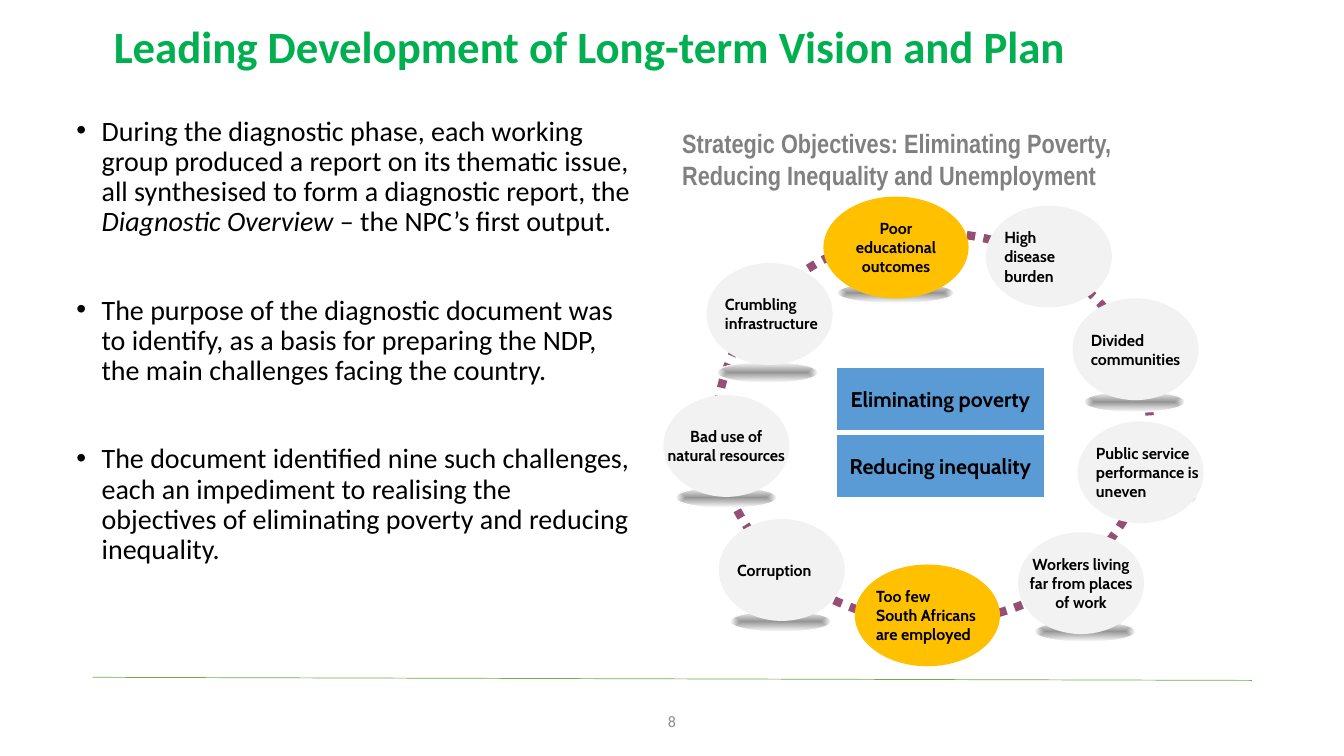
import pptx
import pptx.util
import pptx.dml.color
import pptx.enum.dml
import pptx.enum.shapes
import pptx.enum.text
import pptx.oxml.ns
import lxml.etree

Pt = pptx.util.Pt
SHAPE = pptx.enum.shapes.MSO_SHAPE
ALIGN = pptx.enum.text.PP_ALIGN
ANCHOR = pptx.enum.text.MSO_ANCHOR
qn = pptx.oxml.ns.qn

COLOURS = {
    "title": "00B050", "text": "000000", "heading": "808080", "number": "8C8C8C",
    "rule": "70AD47", "ring": "954F72", "goal": "5B9BD5", "white": "FFFFFF",
    "gold": "FFC000", "grey": "F2F2F2", "shade": "969696",
}

# Content
TITLE = "Leading Development of Long-term Vision and Plan"
HEADING = "Strategic Objectives: Eliminating Poverty, Reducing Inequality and Unemployment"
PAGE = "8"
# Each bullet is a list of (text, italic)
BULLETS = [
    [("During the diagnostic phase, each working group produced a report on its thematic "
      "issue, all synthesised to form a diagnostic report, the ", False),
     ("Diagnostic Overview", True),
     (" – the NPC’s first output.", False)],
    [("The purpose of the diagnostic document was to identify, as a basis for preparing "
      "the NDP, the main challenges facing the country.", False)],
    [("The document identified nine such challenges, each an impediment to realising the "
      "objectives of eliminating poverty and reducing inequality.", False)],
]
GOALS = ["Eliminating poverty", "Reducing inequality"]
# Text, fill, centred, left and top of the oval, left and top of its shadow
CHALLENGES = [
    ("Too few\nSouth Africans\nare employed", "gold", False, (610.6, 403.2), None),
    ("Poor\neducational\noutcomes", "gold", True, (588.2, 140.4), (597.6, 201.6)),
    ("Crumbling\ninfrastructure", "grey", False, (504.7, 187.9), (511.9, 258.5)),
    ("Bad use of\nnatural resources", "grey", True, (473.8, 282.2), (482.4, 347.8)),
    ("Corruption", "grey", False, (513.4, 370.8), (521.3, 436.3)),
    ("Workers living\nfar from places\nof work", "grey", True, (727.2, 380.2), (738.7, 443.5)),
    ("Public service\nperformance is\nuneven", "grey", False, (769.7, 301), (782.6, 347.8)),
    ("Divided\ncommunities", "grey", False, (766.1, 213.1), (774, 279.4)),
    ("High\ndisease\nburden", "grey", False, (704.2, 146.9), None),
]
OVAL_WIDTH = {"gold": 103.7, "grey": 90}
SHADOW_WIDTH = {"gold": 84.2, "grey": 72.7}
OVAL_HEIGHT, SHADOW_HEIGHT = 72.7, 15.1

deck = pptx.Presentation()
deck.slide_width, deck.slide_height = Pt(960), Pt(540)
slide = deck.slides.add_slide(deck.slide_layouts[6])


def rgb(name):
    return pptx.dml.color.RGBColor.from_string(COLOURS[name])


def style(font, face, size, colour, bold=False):
    font.name, font.size, font.bold = face, Pt(size), bold
    font.color.rgb = rgb(colour)


def write(frame, text, face, size, colour, bold=False, align=ALIGN.LEFT):
    frame.text = text
    for paragraph in frame.paragraphs:
        paragraph.alignment = align
        for run in paragraph.runs:
            style(run.font, face, size, colour, bold)


def text_box(left, top, width, height, anchor=ANCHOR.TOP):
    frame = slide.shapes.add_textbox(Pt(left), Pt(top), Pt(width), Pt(height)).text_frame
    frame.word_wrap = True
    frame.vertical_anchor = anchor
    return frame


def add_shape(kind, left, top, width, height, fill=None, line=None, weight=0.75):
    shape = slide.shapes.add_shape(kind, Pt(left), Pt(top), Pt(width), Pt(height))
    shape.shadow.inherit = False
    if fill:
        shape.fill.solid()
        shape.fill.fore_color.rgb = rgb(fill)
    else:
        shape.fill.background()
    if line:
        shape.line.color.rgb = rgb(line)
        shape.line.width = Pt(weight)
    else:
        shape.line.fill.background()
    return shape


def set_inset(frame, inset):
    frame.margin_left = frame.margin_right = Pt(inset)
    frame.margin_top = frame.margin_bottom = Pt(inset)
    frame.vertical_anchor = ANCHOR.MIDDLE


def add_shadow(left, top, width):
    shadow = add_shape(SHAPE.OVAL, left, top, width, SHADOW_HEIGHT, line="white")
    shadow.fill.gradient()
    for stop, colour in zip(shadow.fill.gradient_stops, ("shade", "white")):
        stop.color.rgb = rgb(colour)
    gradient = shadow.element.spPr.find(qn("a:gradFill"))
    gradient.remove(gradient.find(qn("a:lin")))
    spread = lxml.etree.SubElement(gradient, qn("a:path"), path="shape")
    lxml.etree.SubElement(spread, qn("a:fillToRect"),
                          l="50000", t="50000", r="50000", b="50000")


# Rule above the footer
rule = slide.shapes.add_connector(pptx.enum.shapes.MSO_CONNECTOR.STRAIGHT,
                                  Pt(66.2), Pt(483.8), Pt(894.2), Pt(486))
rule.line.color.rgb = rgb("rule")
rule.line.width = Pt(0.5)
lxml.etree.SubElement(rule.element.spPr, qn("a:effectLst"))

# Title, heading and page number
title = text_box(74.2, 10.1, 761, 49.7, ANCHOR.MIDDLE)
write(title, TITLE, "Calibri", 32, "title", True)
title.paragraphs[0].line_spacing = 0.9
write(text_box(360.7, 500.4, 238.3, 28.8, ANCHOR.MIDDLE), PAGE,
      "Calibri", 11.4, "number", align=ALIGN.CENTER)
write(text_box(480.2, 87.1, 345.6, 53.3), HEADING, "Arial Narrow", 18.9, "heading", True)

# Bulleted findings
findings = text_box(47.5, 79.9, 409.7, 376.6)
for index, parts in enumerate(BULLETS):
    finding = findings.add_paragraph() if index else findings.paragraphs[0]
    properties = finding._p.get_or_add_pPr()
    properties.set("marL", str(Pt(18)))
    properties.set("indent", str(-Pt(18)))
    lxml.etree.SubElement(properties, qn("a:buFont"), typeface="Arial")
    lxml.etree.SubElement(properties, qn("a:buChar"), char="•")
    finding.line_spacing = 0.9
    if index:
        finding.space_before = Pt(41.5)
    for text, italic in parts:
        run = finding.add_run()
        run.text = text
        style(run.font, "Calibri", 20, "text")
        run.font.italic = italic

# Dotted ring, open just left of the top; angles in 60000ths of a degree
ring = add_shape(SHAPE.ARC, 511.9, 166.3, 309.6, 277.9, line="ring", weight=6)
ring.adjustments[0] = 270 * 0.6
ring.adjustments[1] = 264.7 * 0.6
ring.line.dash_style = pptx.enum.dml.MSO_LINE.ROUND_DOT
lxml.etree.SubElement(ring.line._get_or_add_ln(), qn("a:tailEnd"), type="triangle")

# Goals in the middle of the ring
for index, goal in enumerate(GOALS):
    box = add_shape(SHAPE.RECTANGLE, 596.9, 261.4 + 48.2 * index, 149.8, 46.8,
                    "goal", "white", 2.25)
    set_inset(box.text_frame, 4.3)
    write(box.text_frame, goal, "Cabin", 15.2, "text", True, ALIGN.CENTER)

# Challenges around the ring
for text, fill, centred, place, shadow_place in CHALLENGES:
    if shadow_place:
        add_shadow(*shadow_place, SHADOW_WIDTH[fill])
    challenge = add_shape(SHAPE.OVAL, *place, OVAL_WIDTH[fill], OVAL_HEIGHT, fill)
    set_inset(challenge.text_frame, 0)
    challenge.text_frame.word_wrap = False
    write(challenge.text_frame, text, "Cabin", 11.4, "text", True,
          ALIGN.CENTER if centred else ALIGN.LEFT)

deck.save("out.pptx")
